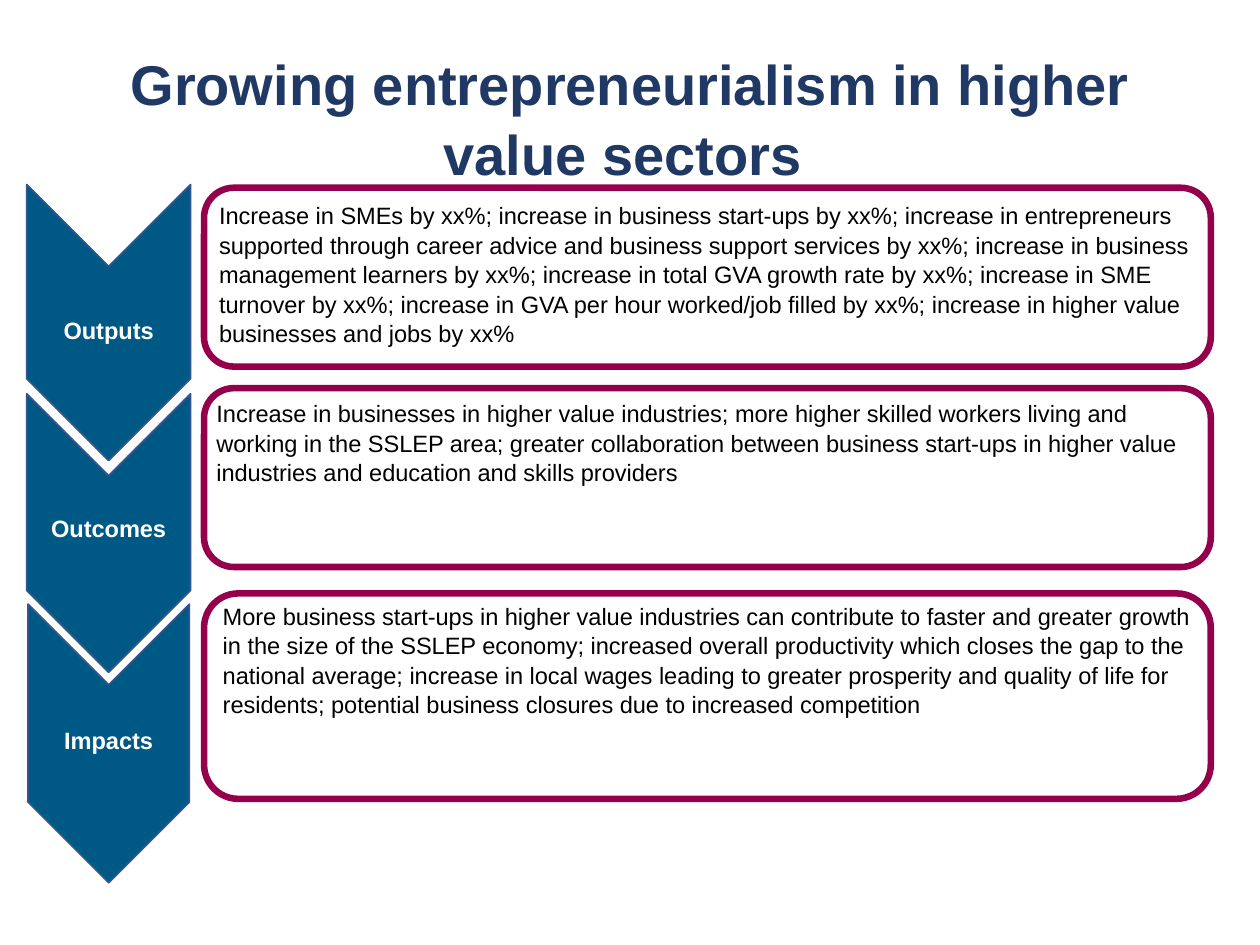
"""Build the slide on outputs, outcomes and impacts of growing entrepreneurialism."""
import pptx
import pptx.dml.color
import pptx.enum.shapes
import pptx.enum.text
import pptx.util

Pt = pptx.util.Pt
Shape = pptx.enum.shapes.MSO_SHAPE
Align = pptx.enum.text.PP_ALIGN
rgb = pptx.dml.color.RGBColor.from_string

THEME = {
    "panel": {"fill": "FFFFFF", "line": "94004B", "width": 3.75},
    "chevron": {"fill": "005984", "line": "325491", "width": 1},
    "title": {"color": "203864", "font": {"name": "Arial", "size": Pt(32), "bold": True}},
    "label": {"color": "FFFFFF", "font": {"name": "Arial", "size": Pt(13.5), "bold": True}},
    "body": {"color": "000000", "font": {"name": "Arial", "size": Pt(13.5), "bold": False}},
}
FRAME = {
    "word_wrap": True,
    "auto_size": pptx.enum.text.MSO_AUTO_SIZE.NONE,
    "vertical_anchor": pptx.enum.text.MSO_ANCHOR.TOP,
}
PANEL_LEFT, PANEL_WIDTH = 116.6, 575.3
CHEVRON_CENTER, LABEL_HEIGHT = 62.1, 23.8


def write(box, text, style, align):
    """Put one styled paragraph into a box."""
    frame = box.text_frame
    for name, value in FRAME.items():
        setattr(frame, name, value)
    para = frame.paragraphs[0]
    for name, value in {"alignment": align, "line_spacing": 1.04}.items():
        setattr(para, name, value)
    span = para.add_run()
    span.text = text
    for name, value in THEME[style]["font"].items():
        setattr(span.font, name, value)
    span.font.color.rgb = rgb(THEME[style]["color"])


def draw(kind, style, left, top, width, height):
    """Add a filled and outlined preset shape."""
    shape = slide.shapes.add_shape(kind, Pt(left), Pt(top), Pt(width), Pt(height))
    shape.shadow.inherit = False
    shape.fill.solid()
    shape.fill.fore_color.rgb = rgb(THEME[style]["fill"])
    shape.line.color.rgb = rgb(THEME[style]["line"])
    shape.line.width = Pt(THEME[style]["width"])
    return shape


deck = pptx.Presentation()
deck.slide_width, deck.slide_height = Pt(720), Pt(540)
slide = deck.slides.add_slide(deck.slide_layouts[5])

title = slide.shapes.title
for name, value in {"left": 55.4, "top": 23, "width": 609.8, "height": 85}.items():
    setattr(title, name, Pt(value))
write(title, "Growing entrepreneurialism in higher value sectors ", "title", Align.CENTER)

stages = [
    {
        "label": "Outputs", "label_width": 74.2, "label_top": 176.4,
        "panel": (107.3, 102.2), "text_box": (118.1, 110.9, 573.8, 100.8),
        "chevron": (184.3, 157.7, 93.6),
        "text": "Increase in SMEs by xx%; increase in business start-ups by xx%; increase in "
                "entrepreneurs supported through career advice and business support services by "
                "xx%; increase in business management learners by xx%; increase in total GVA "
                "growth rate by xx%; increase in SME turnover by xx%; increase in GVA per hour "
                "worked/job filled by xx%; increase in higher value businesses and jobs by xx%",
    },
    {
        "label": "Outcomes", "label_width": 84.2, "label_top": 289.4,
        "panel": (221.8, 102.2), "text_box": (116.6, 223.9, 575.3, 64.1),
        "chevron": (304.6, 159.1, 93.6),
        "text": "Increase in businesses in higher value industries; more higher skilled workers "
                "living and working in the SSLEP area; greater collaboration between business "
                "start-ups in higher value industries and education and skills providers",
    },
    {
        "label": "Impacts", "label_width": 74.2, "label_top": 410.4,
        "panel": (339.1, 117.4), "text_box": (120.2, 339.8, 575.3, 82.8),
        "chevron": (424.8, 159.1, 92.2),
        "text": "More business start-ups in higher value industries can contribute to faster and "
                "greater growth in the size of the SSLEP economy; increased overall productivity "
                "which closes the gap to the national average; increase in local wages leading to "
                "greater prosperity and quality of life for residents; potential business "
                "closures due to increased competition",
    },
]

for stage in stages:
    top, height = stage["panel"]
    draw(Shape.ROUNDED_RECTANGLE, "panel", PANEL_LEFT, top, PANEL_WIDTH, height)
    box = slide.shapes.add_textbox(*map(Pt, stage["text_box"]))
    write(box, stage["text"], "body", Align.LEFT)

for stage in stages:
    middle, length, breadth = stage["chevron"]
    chevron = draw(Shape.CHEVRON, "chevron", CHEVRON_CENTER - length / 2,
                   middle - breadth / 2, length, breadth)
    chevron.rotation = 90

for stage in stages:
    width = stage["label_width"]
    box = slide.shapes.add_textbox(Pt(CHEVRON_CENTER - width / 2), Pt(stage["label_top"]),
                                   Pt(width), Pt(LABEL_HEIGHT))
    write(box, stage["label"], "label", Align.CENTER)

deck.save("out.pptx")
